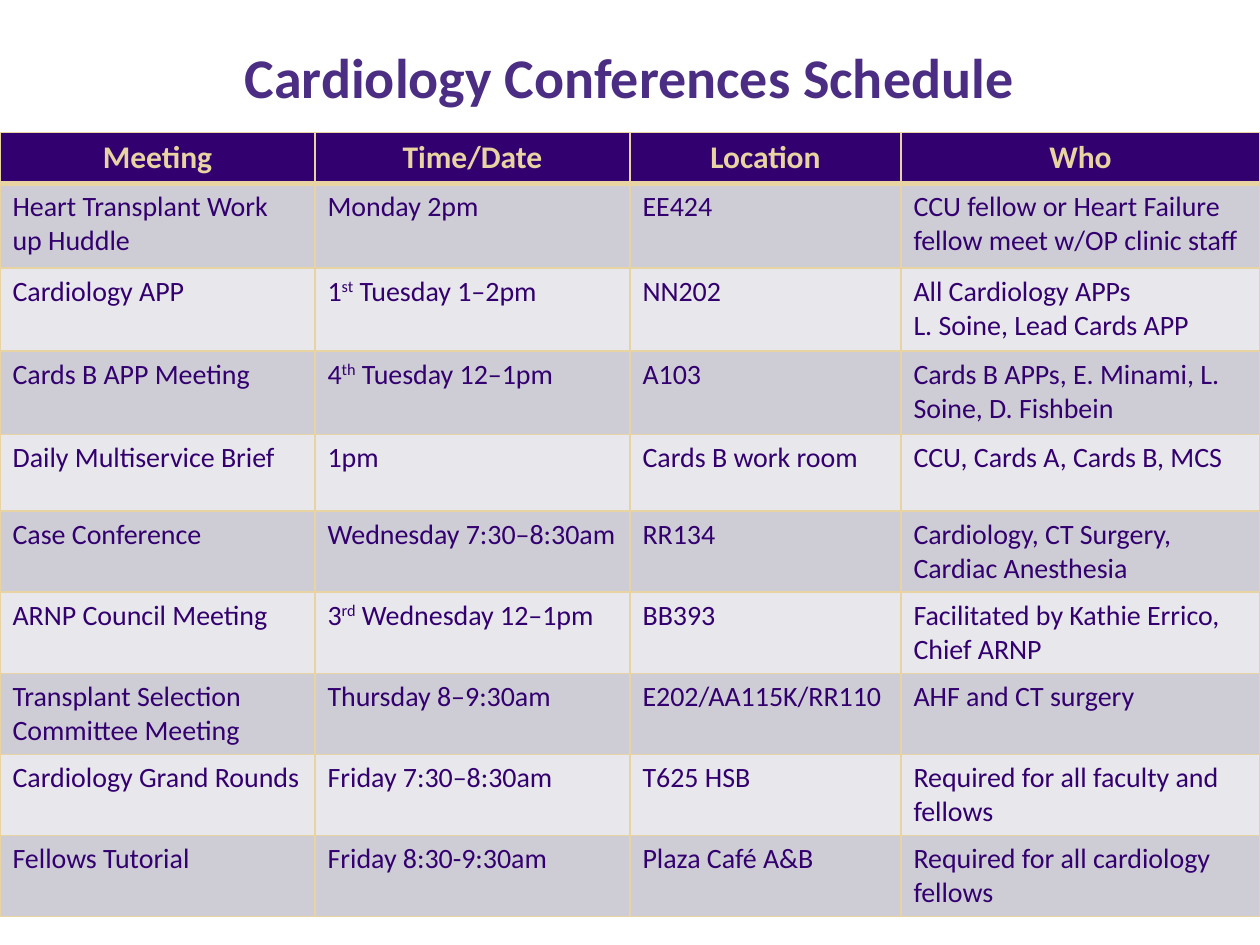
import pptx
import pptx.util
import pptx.dml.color
import pptx.enum.text
import pptx.oxml
import pptx.oxml.ns

Pt = pptx.util.Pt
ALIGN = pptx.enum.text.PP_ALIGN
COLORS = {
    "title": "4B2E83",
    "ink": "33006F",
    "gold": "E8D3A2",
    "dark": "CECCD5",
    "light": "E8E7EB",
}
WIDTHS = [180, 180, 154.8, 205.2]
HEIGHTS = [28.8, 48.2, 47.5, 47.5, 43.9, 43.2, 43.2, 42.5, 44.6, 44.6]

# Text between carets is superscript; a line break starts a new paragraph
ROWS = [
    ["Meeting", "Time/Date", "Location", "Who"],
    ["Heart Transplant Work up Huddle", "Monday 2pm", "EE424",
     "CCU fellow or Heart Failure fellow meet w/OP clinic staff"],
    ["Cardiology APP", "1^st^ Tuesday 1–2pm", "NN202",
     "All Cardiology APPs\nL. Soine, Lead Cards APP"],
    ["Cards B APP Meeting", "4^th^ Tuesday 12–1pm", "A103",
     "Cards B APPs, E. Minami, L. Soine, D. Fishbein"],
    ["Daily Multiservice Brief", "1pm", "Cards B work room",
     "CCU, Cards A, Cards B, MCS"],
    ["Case Conference", "Wednesday 7:30–8:30am", "RR134",
     "Cardiology, CT Surgery, Cardiac Anesthesia"],
    ["ARNP Council Meeting", "3^rd^ Wednesday 12–1pm", "BB393",
     "Facilitated by Kathie Errico, Chief ARNP"],
    ["Transplant Selection Committee Meeting", "Thursday 8–9:30am",
     "E202/AA115K/RR110", "AHF and CT surgery"],
    ["Cardiology Grand Rounds", "Friday 7:30–8:30am", "T625 HSB",
     "Required for all faculty and fellows"],
    ["Fellows Tutorial", "Friday 8:30-9:30am", "Plaza Café A&B",
     "Required for all cardiology fellows"],
]


class Deck:
    font = "Calibri"

    def __init__(self, width, height):
        self.prs = pptx.Presentation()
        self.prs.slide_width = Pt(width)
        self.prs.slide_height = Pt(height)
        self.slide = self.prs.slides.add_slide(self.prs.slide_layouts[5])

    def color(self, name):
        return pptx.dml.color.RGBColor.from_string(COLORS[name])

    def text(self, frame, text, size, color, bold=False, align=ALIGN.LEFT):
        for i, line in enumerate(text.split("\n")):
            para = frame.add_paragraph() if i else frame.paragraphs[0]
            para.alignment = align
            for j, part in enumerate(line.split("^")):
                run = para.add_run()
                run.text = part
                run.font.name = self.font
                run.font.size = Pt(size)
                run.font.bold = bold
                run.font.color.rgb = self.color(color)
                if j % 2:
                    run._r.get_or_add_rPr().set("baseline", "30000")

    def title(self, text, left, top, width, height):
        box = self.slide.shapes.title
        box.left, box.top = Pt(left), Pt(top)
        box.width, box.height = Pt(width), Pt(height)
        frame = box.text_frame
        frame.word_wrap = True
        frame.auto_size = pptx.enum.text.MSO_AUTO_SIZE.NONE
        frame.vertical_anchor = pptx.enum.text.MSO_ANCHOR.BOTTOM
        self.text(frame, text, 32, "title", True, ALIGN.CENTER)
        frame.paragraphs[0].line_spacing = 0.9
        frame.paragraphs[0].space_before = Pt(0)

    def border(self, cell, top, bottom):
        props = cell._tc.get_or_add_tcPr()
        for side, width in zip("LRTB", (1, 1, top, bottom)):
            props.append(pptx.oxml.parse_xml(
                f'<a:ln{side} {pptx.oxml.ns.nsdecls("a")} w="{Pt(width)}">'
                f'<a:solidFill><a:srgbClr val="{COLORS["gold"]}"/></a:solidFill>'
                f'</a:ln{side}>'))

    def cell(self, cell, text, row):
        # Borders come before the fill in the cell properties
        self.border(cell, 3 if row == 1 else 1, 3 if row == 0 else 1)
        cell.fill.solid()
        if row == 0:
            fill = "ink"
            self.text(cell.text_frame, text, 18, "gold", True, ALIGN.CENTER)
        else:
            fill = "dark" if row % 2 else "light"
            self.text(cell.text_frame, text, 16, "ink")
        cell.fill.fore_color.rgb = self.color(fill)

    def table(self, rows, left, top, widths, heights):
        grid = self.slide.shapes.add_table(
            len(rows), len(widths), Pt(left), Pt(top),
            Pt(sum(widths)), Pt(sum(heights))).table
        for col, width in zip(grid.columns, widths):
            col.width = Pt(width)
        for row, height in zip(grid.rows, heights):
            row.height = Pt(height)
        for r, texts in enumerate(rows):
            for c, text in enumerate(texts):
                self.cell(grid.cell(r, c), text, r)


def main():
    deck = Deck(720, 540)
    # Heading
    deck.title("Cardiology Conferences Schedule", 37.5, 31, 644.5, 36)
    # Schedule
    deck.table(ROWS, 0, 75.8, WIDTHS, HEIGHTS)
    deck.prs.save("out.pptx")


if __name__ == "__main__":
    main()
